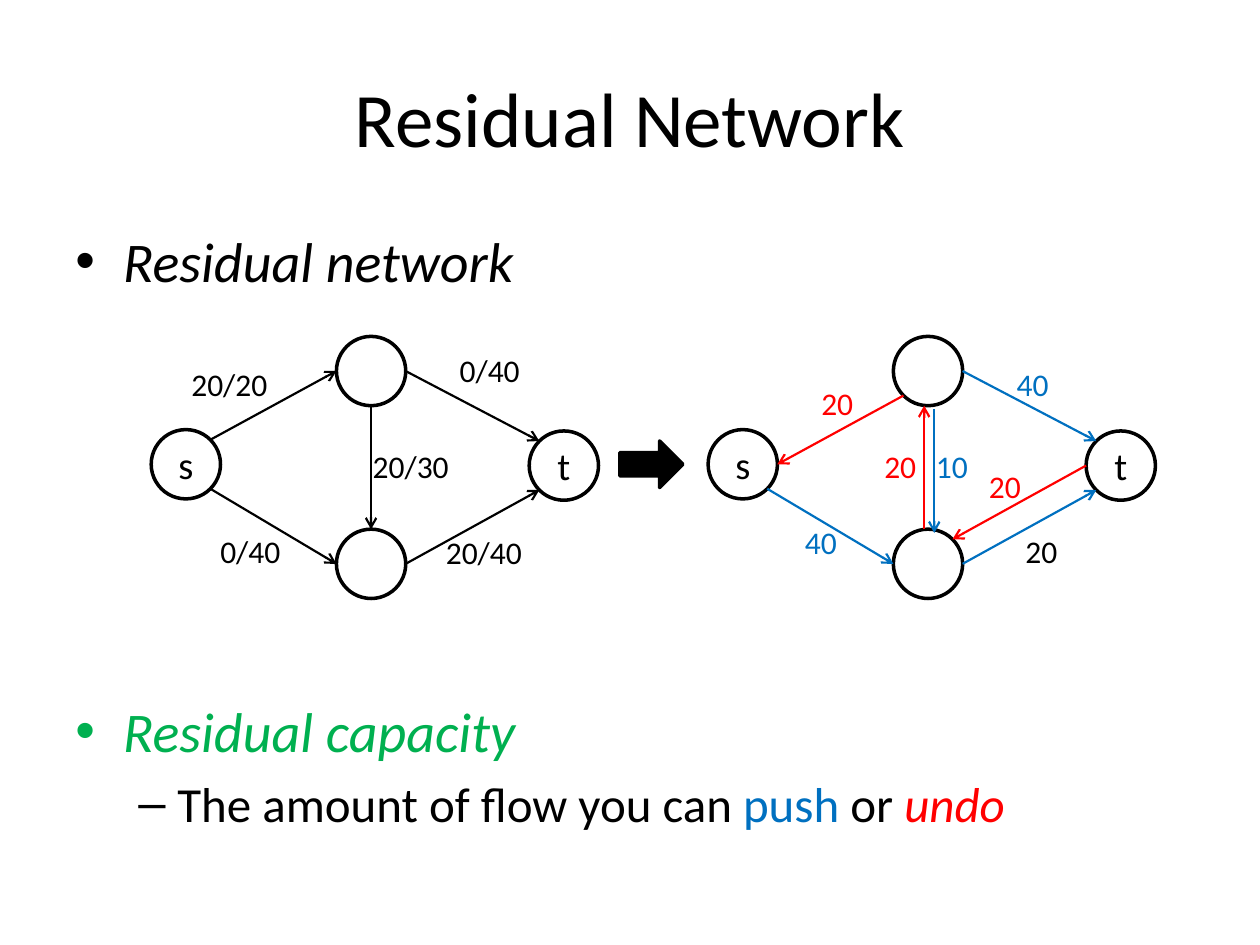
from math import cos, radians, sin

from lxml import etree
from pptx import Presentation
from pptx.dml.color import RGBColor
from pptx.enum.shapes import MSO_CONNECTOR, MSO_SHAPE
from pptx.enum.text import MSO_ANCHOR, MSO_AUTO_SIZE, PP_ALIGN
from pptx.oxml.ns import qn
from pptx.util import Inches, Pt

STRAIGHT = MSO_CONNECTOR.STRAIGHT
OVAL, RIGHT_ARROW = MSO_SHAPE.OVAL, MSO_SHAPE.RIGHT_ARROW
MIDDLE, CENTER = MSO_ANCHOR.MIDDLE, PP_ALIGN.CENTER
FIT_SHAPE = MSO_AUTO_SIZE.SHAPE_TO_FIT_TEXT

FONT = "Calibri"
COLORS = {"black": "000000", "green": "00B050", "blue": "0070C0", "red": "FF0000"}

TITLE = "Residual Network"
# bullet, left margin, hanging indent, space before, size, runs (text, color, italic)
BODY = [
    ("•", 0.38, 0.38, 0, 32, [("Residual network", "black", True)]),
    ("•", 0.38, 0.38, 230, 32, [("Residual capacity", "green", True)]),
    ("–", 0.81, 0.31, 5.6, 28, [
        ("The amount of flow you can ", "black", False), ("push", "blue", False),
        (" or ", "black", False), ("undo", "red", True)]),
]

NODE_SIZE = 0.55
NODES = {  # left, top, text
    "source": (1.2, 3.41, "s"),
    "upper": (2.67, 2.67, ""),
    "lower": (2.67, 4.2, ""),
    "sink": (4.2, 3.42, "t"),
}
ANGLES = {"E": 0, "SE": 45, "S": 90, "SW": 135, "W": 180, "NW": 225, "N": 270, "NE": 315}

# Edges: start node, side, end node, side, color, shift (x, y)
# Labels: left, top, text, color
GRAPHS = [
    {
        "offset": 0,
        "edges": [
            ("source", "NE", "upper", "W", "black", (0, 0)),
            ("source", "SE", "lower", "W", "black", (0, 0)),
            ("upper", "E", "sink", "NW", "black", (0, 0)),
            ("lower", "E", "sink", "SW", "black", (0, 0)),
            ("upper", "S", "lower", "N", "black", (0, 0)),
        ],
        "labels": [
            (1.42, 2.85, "20/20", "black"), (1.65, 4.17, "0/40", "black"),
            (3.44, 4.18, "20/40", "black"), (3.55, 2.74, "0/40", "black"),
            (2.86, 3.5, "20/30", "black"),
        ],
    },
    {
        "offset": 4.42,
        "edges": [
            ("source", "SE", "lower", "W", "blue", (0, 0)),
            ("upper", "E", "sink", "NW", "blue", (0, 0)),
            ("lower", "E", "sink", "SW", "blue", (0, 0)),
            ("upper", "SW", "source", "E", "red", (0, 0)),
            ("sink", "W", "lower", "NE", "red", (0, 0)),
            ("lower", "N", "upper", "S", "red", (-0.03, 0)),
            ("upper", "S", "lower", "N", "blue", (0.05, 0.03)),
        ],
        "labels": [
            (6.29, 4.1, "40", "blue"), (8.04, 4.17, "20", "black"),
            (7.97, 2.85, "40", "blue"), (6.92, 3.5, "20", "red"),
            (6.42, 3, "20", "red"), (7.75, 3.66, "20", "red"),
            (7.33, 3.5, "10", "blue"),
        ],
    },
]
LABEL_WIDTHS = {2: 0.46, 4: 0.68, 5: 0.81}  # by number of characters


def rgb(color):
    return RGBColor.from_string(COLORS[color])


def format_run(run, size, color="black", italic=False):
    run.font.name = FONT
    run.font.size = Pt(size)
    run.font.italic = italic
    run.font.color.rgb = rgb(color)


def add_text(slide, box, text, size, color="black"):
    """Add a one-line text box and return its shape."""
    shape = slide.shapes.add_textbox(*map(Inches, box))
    shape.text_frame.text = text
    format_run(shape.text_frame.paragraphs[0].runs[0], size, color)
    return shape


def add_title(slide):
    frame = add_text(slide, (0.5, 0.3, 9, 1.25), TITLE, 44).text_frame
    frame.word_wrap = True
    frame.vertical_anchor = MIDDLE
    frame.paragraphs[0].alignment = CENTER


def add_body(slide):
    frame = slide.shapes.add_textbox(*map(Inches, (0.5, 1.75, 9, 5.25))).text_frame
    frame.word_wrap = True
    for index, (bullet, margin, indent, space, size, runs) in enumerate(BODY):
        paragraph = frame.add_paragraph() if index else frame.paragraphs[0]
        paragraph.space_before = Pt(space)
        for text, color, italic in runs:
            run = paragraph.add_run()
            run.text = text
            format_run(run, size, color, italic)
        properties = paragraph._p.get_or_add_pPr()
        properties.set("marL", str(Inches(margin)))
        properties.set("indent", str(-Inches(indent)))
        etree.SubElement(properties, qn("a:buFont"), typeface="Arial")
        etree.SubElement(properties, qn("a:buChar"), char=bullet)


def add_outlined(slide, preset, box):
    shape = slide.shapes.add_shape(preset, *map(Inches, box))
    shape.shadow.inherit = False
    shape.fill.background()
    shape.line.color.rgb = rgb("black")
    shape.line.width = Pt(2)
    return shape


def add_node(slide, left, top, text):
    node = add_outlined(slide, OVAL, (left, top, NODE_SIZE, NODE_SIZE))
    if text:
        frame = node.text_frame
        frame.margin_left = frame.margin_right = 0
        frame.vertical_anchor = MIDDLE
        frame.text = text
        frame.paragraphs[0].alignment = CENTER
        format_run(frame.paragraphs[0].runs[0], 22)


def rim_point(name, side, shift):
    """Point on a node's circle, moved by shift."""
    left, top, _ = NODES[name]
    angle, radius = radians(ANGLES[side]), NODE_SIZE / 2
    return (left + radius * (1 + cos(angle)) + shift[0],
            top + radius * (1 + sin(angle)) + shift[1])


def add_edge(slide, start, end, color):
    edge = slide.shapes.add_connector(STRAIGHT, *map(Inches, start + end))
    edge.line.color.rgb = rgb(color)
    edge.line.width = Pt(1.25)
    etree.SubElement(edge.line._get_or_add_ln(), qn("a:tailEnd"), type="arrow")
    etree.SubElement(edge._element.spPr, qn("a:effectLst"))


def add_graph(slide, graph):
    offset = graph["offset"]
    for left, top, text in NODES.values():
        add_node(slide, left + offset, top, text)
    for start, start_side, end, end_side, color, (x, y) in graph["edges"]:
        shift = (x + offset, y)
        add_edge(slide, rim_point(start, start_side, shift),
                 rim_point(end, end_side, shift), color)
    for left, top, text, color in graph["labels"]:
        label = add_text(slide, (left, top, LABEL_WIDTHS[len(text)], 0.4), text, 18, color)
        label.text_frame.word_wrap = False
        label.text_frame.auto_size = FIT_SHAPE


def main():
    presentation = Presentation()
    presentation.slide_width, presentation.slide_height = Inches(10), Inches(7.5)
    slide = presentation.slides.add_slide(presentation.slide_layouts[6])
    add_title(slide)
    add_body(slide)
    for graph in GRAPHS:
        add_graph(slide, graph)
    arrow = add_outlined(slide, RIGHT_ARROW, (4.92, 3.5, 0.5, 0.37))
    arrow.fill.solid()
    arrow.fill.fore_color.rgb = rgb("black")
    presentation.save("out.pptx")


if __name__ == "__main__":
    main()
